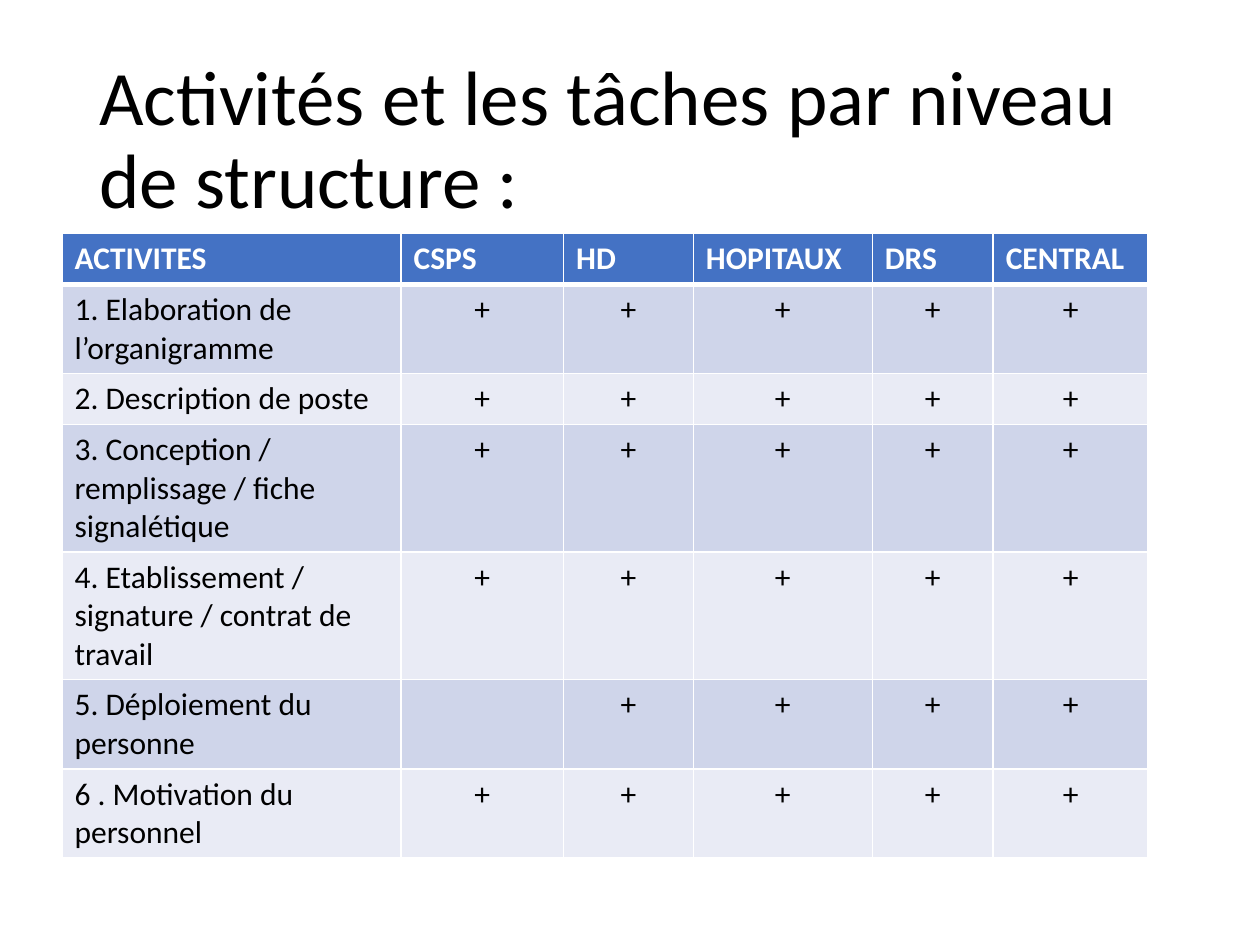
from lxml import etree
from pptx import Presentation
from pptx import util as u
from pptx.dml import color
from pptx.enum import text
from pptx.oxml import ns

COLORS = {"ink": "000000", "white": "FFFFFF", "header": "4472C4",
          "odd": "CFD5EA", "even": "E9EBF5"}
FONT = "Calibri"
HEADERS = ["ACTIVITES", "CSPS", "HD", "HOPITAUX", "DRS", "CENTRAL"]
ACTIVITIES = [
    ("1. Elaboration de l’organigramme", "+++++"),
    ("2. Description de poste", "+++++"),
    ("3. Conception / remplissage / fiche signalétique", "+++++"),
    ("4. Etablissement / signature / contrat de travail", "+++++"),
    ("5. Déploiement du personne", " ++++"),
    ("6 . Motivation du personnel", "+++++"),
]
COL_SHARES = [2.69, 1.29, 1.03, 1.42, 0.96, 1.23]
ROW_LINES = [1, 2, 1, 3, 3, 2, 2]
LINE_HEIGHT = 0.77
ROW_PADDING = 0.26


def rgb(name):
    return color.RGBColor.from_string(COLORS[name])


def add_run(p, content, size, ink, bold=False):
    r = p.add_run()
    r.text = content
    r.font.name = FONT
    r.font.size = u.Pt(size)
    r.font.bold = bold
    r.font.color.rgb = rgb(ink)


def add_title(s, left, top, width, height):
    sp = s.shapes.add_textbox(u.Cm(left), u.Cm(top), u.Cm(width), u.Cm(height))
    tf = sp.text_frame
    tf.word_wrap = True
    tf.vertical_anchor = text.MSO_ANCHOR.MIDDLE
    p = tf.paragraphs[0]
    p.line_spacing = 0.9
    add_run(p, "Activités et les tâches par niveau de structure :", 44, "ink")


def set_borders(cell, top, bottom):
    tc_pr = cell._tc.get_or_add_tcPr()
    sides = [("lnL", 1), ("lnR", 1), ("lnT", top), ("lnB", bottom)]
    for i, (tag, width) in enumerate(sides):
        ln = etree.Element(ns.qn(f"a:{tag}"), w=str(u.Pt(width)))
        fill = etree.SubElement(ln, ns.qn("a:solidFill"))
        etree.SubElement(fill, ns.qn("a:srgbClr"), val=COLORS["white"])
        tc_pr.insert(i, ln)


def fill_cell(cell, content, row, col):
    header = row == 0
    fill = "header" if header else "odd" if row % 2 else "even"
    cell.fill.solid()
    cell.fill.fore_color.rgb = rgb(fill)
    set_borders(cell, 3 if row == 1 else 1, 3 if header else 1)
    p = cell.text_frame.paragraphs[0]
    if not header and col > 0:
        p.alignment = text.PP_ALIGN.CENTER
    if content.strip():
        add_run(p, content, 18, "white" if header else "ink", header)


def add_activity_table(s, left, top, width):
    rows = [HEADERS] + [[name, *marks] for name, marks in ACTIVITIES]
    heights = [n * LINE_HEIGHT + ROW_PADDING for n in ROW_LINES]
    table = s.shapes.add_table(len(rows), len(HEADERS), u.Cm(left), u.Cm(top),
                               u.Cm(width), u.Cm(sum(heights))).table
    for column, share in zip(table.columns, COL_SHARES):
        column.width = u.Cm(width * share / sum(COL_SHARES))
    for i, (values, height) in enumerate(zip(rows, heights)):
        table.rows[i].height = u.Cm(height)
        for j, value in enumerate(values):
            fill_cell(table.cell(i, j), value, i, j)


def main():
    prs = Presentation()
    prs.slide_width, prs.slide_height = u.Cm(25.4), u.Cm(19.05)
    s = prs.slides.add_slide(prs.slide_layouts[6])
    add_title(s, 1.75, 1.02, 21.9, 3.68)
    add_activity_table(s, 1.25, 4.7, 21.9)
    prs.save("out.pptx")


if __name__ == "__main__":
    main()
